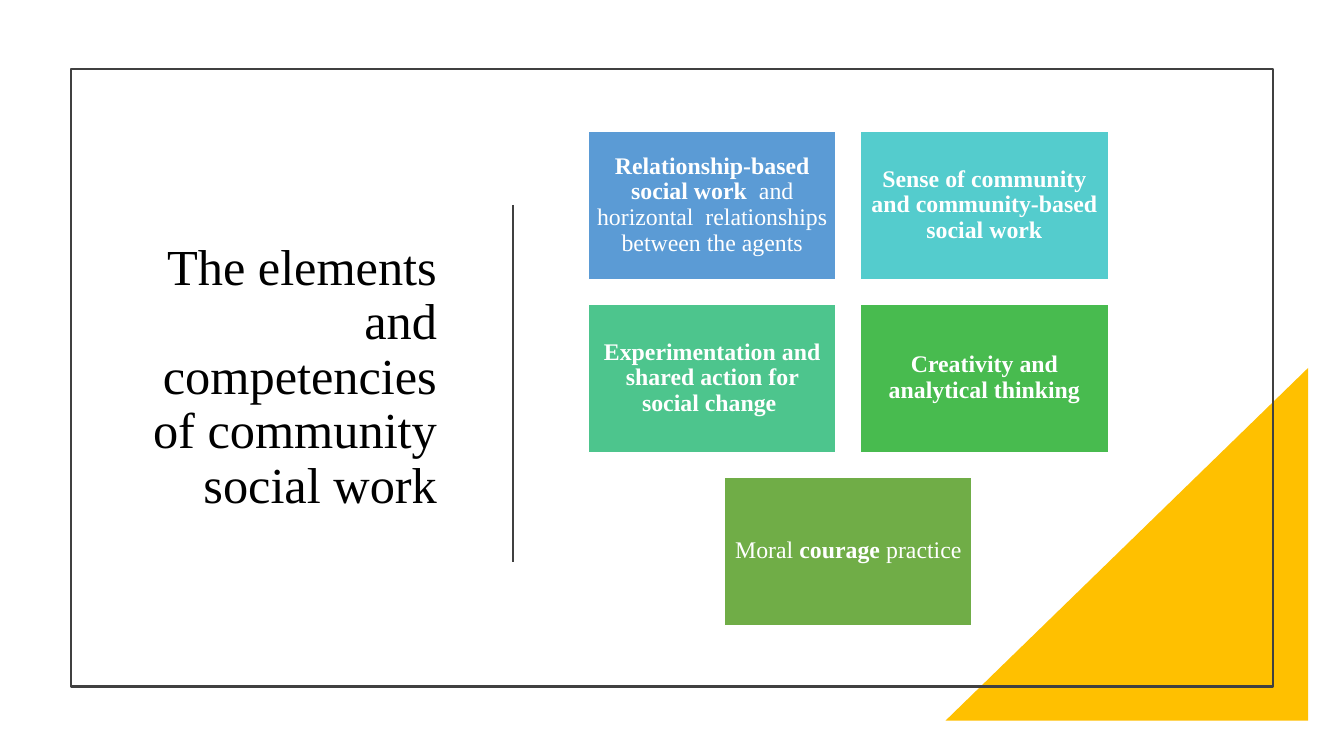
import pptx
import pptx.util
import pptx.dml.color
import pptx.enum.shapes
import pptx.enum.text
import pptx.oxml
import pptx.oxml.ns

Cm = pptx.util.Cm
Pt = pptx.util.Pt
RGB = pptx.dml.color.RGBColor
Shape = pptx.enum.shapes.MSO_SHAPE
Align = pptx.enum.text.PP_ALIGN
Anchor = pptx.enum.text.MSO_ANCHOR

BLACK = RGB(0x00, 0x00, 0x00)
WHITE = RGB(0xFF, 0xFF, 0xFF)
CHARCOAL = RGB(0x40, 0x40, 0x40)
GOLD = RGB(0xFF, 0xC0, 0x00)
BLUE = RGB(0x5B, 0x9B, 0xD5)
TURQUOISE = RGB(0x54, 0xCC, 0xCD)
MINT = RGB(0x4D, 0xC5, 0x8D)
GREEN = RGB(0x48, 0xBB, 0x4F)
OLIVE = RGB(0x70, 0xAD, 0x47)

FONT = "Times New Roman"
HEADING = "The elements and competencies of community social work"
COMPETENCY_ROWS = [
    [
        (BLUE, [("Relationship-based social work ", True),
                (" and horizontal  relationships between the agents", False)]),
        (TURQUOISE, [("Sense of community and community-based social work", True)]),
    ],
    [
        (MINT, [("Experimentation and shared action for social change ", True)]),
        (GREEN, [("Creativity and analytical thinking", True)]),
    ],
    [
        (OLIVE, [("Moral", False), (" courage ", True), ("practice", False)]),
    ],
]

CARD_WIDTH, CARD_HEIGHT, GAP = 6.24, 3.74, 0.62
GRID_CENTER, GRID_TOP = 21.38, 3.3


def add_block(slide, preset, left, top, width, height):
    block = slide.shapes.add_shape(preset, Cm(left), Cm(top), Cm(width), Cm(height))
    block.shadow.inherit = False
    return block


def format_paragraph(paragraph, size, color, alignment):
    paragraph.alignment = alignment
    paragraph.line_spacing = 0.9
    paragraph.font.name = FONT
    paragraph.font.size = Pt(size)
    paragraph.font.color.rgb = color


def add_card(slide, left, top, color, phrases):
    card = add_block(slide, Shape.RECTANGLE, left, top, CARD_WIDTH, CARD_HEIGHT)
    card.fill.solid()
    card.fill.fore_color.rgb = color
    card.line.color.rgb = WHITE
    card.line.width = Pt(1)
    frame = card.text_frame
    frame.word_wrap = True
    frame.vertical_anchor = Anchor.MIDDLE
    frame.margin_left = frame.margin_right = Cm(0.18)
    frame.margin_top = frame.margin_bottom = Cm(0.18)
    paragraph = frame.paragraphs[0]
    format_paragraph(paragraph, 17, WHITE, Align.CENTER)
    for phrase, bold in phrases:
        run = paragraph.add_run()
        run.text = phrase
        run.font.bold = bold


def main():
    deck = pptx.Presentation()
    deck.slide_width, deck.slide_height = Cm(33.87), Cm(19.05)
    slide = deck.slides.add_slide(deck.slide_layouts[5])

    corner = add_block(slide, Shape.RIGHT_TRIANGLE, 23.83, 9.27, 9.14, 8.89)
    corner.fill.solid()
    corner.fill.fore_color.rgb = GOLD
    corner.line.fill.background()
    corner.element.spPr.find(pptx.oxml.ns.qn("a:xfrm")).set("flipH", "1")

    border = add_block(slide, Shape.RECTANGLE, 1.78, 1.73, 30.3, 15.57)
    border.fill.background()

    heading = slide.shapes.title
    heading.left, heading.top = Cm(2.79), Cm(3.3)
    heading.width, heading.height = Cm(8.48), Cm(12.45)
    heading.text_frame.text = HEADING
    heading.text_frame.word_wrap = True
    heading.text_frame.auto_size = pptx.enum.text.MSO_AUTO_SIZE.NONE
    heading.text_frame.vertical_anchor = Anchor.MIDDLE
    format_paragraph(heading.text_frame.paragraphs[0], 36, BLACK, Align.RIGHT)

    divider = slide.shapes.add_connector(
        pptx.enum.shapes.MSO_CONNECTOR.STRAIGHT,
        Cm(12.93), Cm(5.16), Cm(12.93), Cm(14.15))
    divider.element.spPr.append(pptx.oxml.parse_xml(
        f'<a:effectLst {pptx.oxml.ns.nsdecls("a")}/>'))

    for outlined in (border, divider):
        outlined.line.color.rgb = CHARCOAL
        outlined.line.width = Pt(1.5)

    for row, cards in enumerate(COMPETENCY_ROWS):
        row_width = len(cards) * (CARD_WIDTH + GAP) - GAP
        row_left = GRID_CENTER - row_width / 2
        top = GRID_TOP + row * (CARD_HEIGHT + GAP)
        for column, (color, phrases) in enumerate(cards):
            left = row_left + column * (CARD_WIDTH + GAP)
            add_card(slide, left, top, color, phrases)

    deck.save("out.pptx")


if __name__ == "__main__":
    main()
